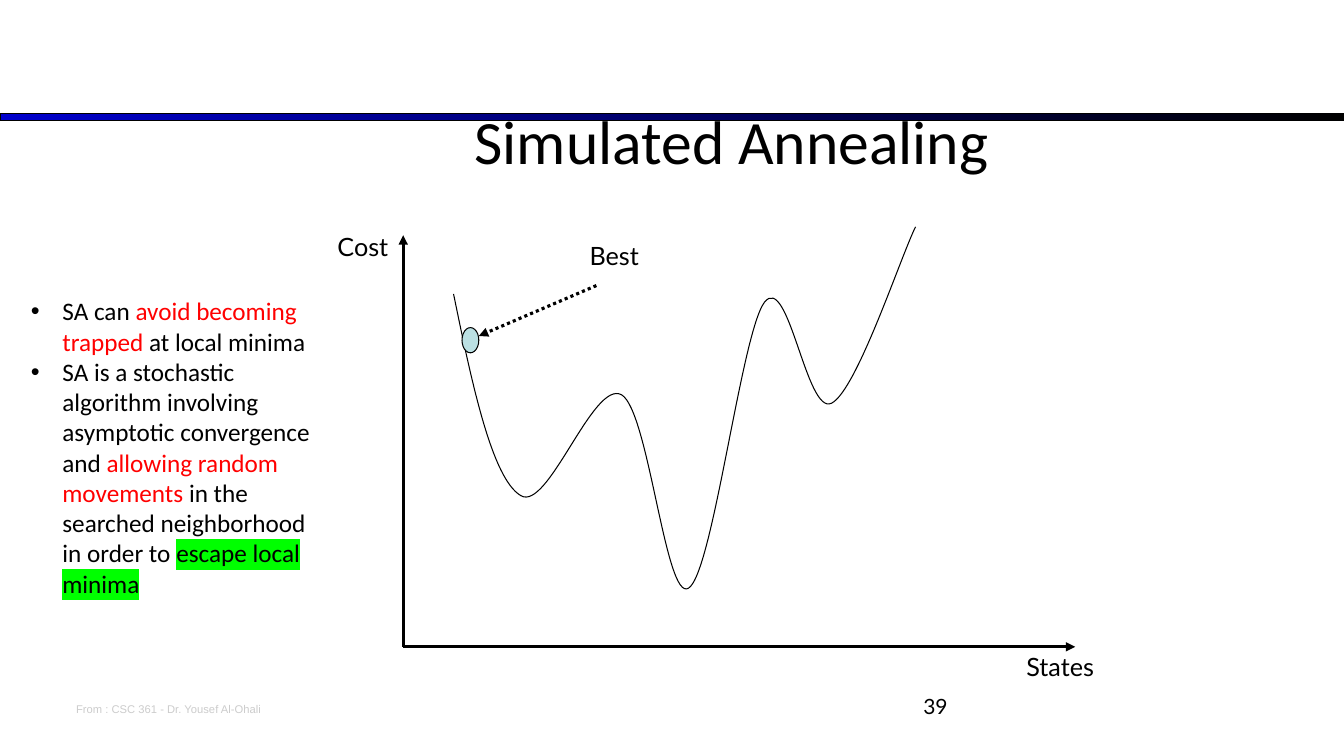
from lxml import etree
from pptx import Presentation, util as u
from pptx.dml.color import RGBColor
from pptx.enum import dml, shapes, text
from pptx.oxml.ns import qn

PX = 9525  # EMU in one px, 96 px to the inch
BLACK, RED, GREEN = "000000", "FF0000", "00FF00"


def px(*lengths):
    return [u.Emu(length * PX) for length in lengths]


def colour(value):
    return RGBColor.from_string(value)


def set_line(line, points=0.75):
    line.color.rgb = colour(BLACK)
    line.width = u.Pt(points)


def add_run(paragraph, words, size, font, value=BLACK, highlight=None):
    run = paragraph.add_run()
    run.text = words
    run.font.size = u.Pt(size)
    run.font.name = font
    run.font.color.rgb = colour(value)
    if highlight:
        mark = etree.Element(qn("a:highlight"))
        etree.SubElement(mark, qn("a:srgbClr"), val=highlight)
        run.font.fill  # the highlight follows the text fill
        run._r.rPr.find(qn("a:solidFill")).addnext(mark)


def add_text_frame(slide, box):
    frame = slide.shapes.add_textbox(*px(*box)).text_frame
    frame.word_wrap = True
    return frame


def add_label(slide, box, words, size=18, font="Lato", value=BLACK,
              align=text.PP_ALIGN.LEFT, anchor=text.MSO_ANCHOR.TOP):
    frame = add_text_frame(slide, box)
    frame.vertical_anchor = anchor
    paragraph = frame.paragraphs[0]
    paragraph.alignment = align
    add_run(paragraph, words, size, font, value)


def add_arrow(slide, start, end, dash=None):
    arrow = slide.shapes.add_connector(
        shapes.MSO_CONNECTOR.STRAIGHT, *px(*start, *end))
    set_line(arrow.line, 2.25)
    if dash:
        arrow.line.dash_style = dash
    etree.SubElement(arrow.line._ln, qn("a:tailEnd"), type="triangle")
    etree.SubElement(arrow._element.spPr, qn("a:effectLst"))


def add_curve(slide, start, controls):
    """Draw cubic curves, with three control points for each."""
    builder = slide.shapes.build_freeform(*start, scale=PX)
    builder.add_line_segments(controls, close=False)
    curve = builder.convert_to_shape()
    curve.shadow.inherit = False
    curve.fill.background()
    set_line(curve.line)
    segments = curve._element.xpath(".//a:lnTo")
    outline = segments[0].getparent()
    for first in range(0, len(segments), 3):
        cubic = etree.SubElement(outline, qn("a:cubicBezTo"))
        for segment in segments[first:first + 3]:
            cubic.append(segment[0])
            outline.remove(segment)


# Gradient rule across the slide
def add_rule(slide, box):
    rule = slide.shapes.add_shape(shapes.MSO_SHAPE.RECTANGLE, *px(*box))
    rule.shadow.inherit = False
    rule.fill.gradient()
    rule.fill.gradient_angle = 0
    for stop, value in zip(rule.fill.gradient_stops, ("0000CC", BLACK)):
        stop.color.rgb = colour(value)
    set_line(rule.line)


# Cost landscape with axes, curve and current best state
def add_landscape(slide, box):
    left, top, width, height = box

    def at(x, y):
        return left + x, top + y

    origin = at(0, height)
    add_arrow(slide, origin, at(0, 0))
    add_arrow(slide, origin, at(width, height))

    controls = [
        (66, 144), (85, 232), (112, 248),
        (138, 264), (181, 137), (208, 152),
        (234, 167), (250, 351), (272, 336),
        (295, 321), (322, 94), (344, 64),
        (367, 34), (384, 172), (408, 160),
        (432, 148), (474, 20), (488, -8),
    ]
    add_curve(slide, at(48, 56), [at(x, y) for x, y in controls])

    best = slide.shapes.add_shape(
        shapes.MSO_SHAPE.OVAL, *px(*at(56, 88), 16, 24))
    best.shadow.inherit = False
    best.fill.solid()
    best.fill.fore_color.rgb = colour("BBE0E3")
    set_line(best.line)
    add_arrow(slide, at(184, 48), at(72, 96), dml.MSO_LINE.ROUND_DOT)

    add_label(slide, (*at(-72, -8), 104, 38), "Cost")
    add_label(slide, (*at(584, height), 112, 38), "States")
    add_label(slide, (*at(168, 0), 80, 38), "Best")


# Bulleted remarks
def add_remarks(slide, box, remarks):
    frame = add_text_frame(slide, box)
    for index, runs in enumerate(remarks):
        paragraph = frame.add_paragraph() if index else frame.paragraphs[0]
        properties = paragraph._p.get_or_add_pPr()
        properties.set("marL", str(30 * PX))
        properties.set("indent", str(-30 * PX))
        etree.SubElement(properties, qn("a:buFont"), typeface="Arial")
        etree.SubElement(properties, qn("a:buChar"), char="•")
        for words, *style in runs:
            add_run(paragraph, words, 18, "Calibri", *style)


# Source credit and page number
def add_footer(slide, box):
    left, top, width, height = box
    add_label(slide, (left, top + 8, 640, 23),
              "From : CSC 361 - Dr. Yousef Al-Ohali", 8, "Arial", "CCCCCC")
    add_label(slide, (left + width - 224, top, 224, height), "39", 15,
              align=text.PP_ALIGN.RIGHT)


def main():
    presentation = Presentation()
    presentation.slide_width, presentation.slide_height = px(1280, 720)
    slide = presentation.slides.add_slide(presentation.slide_layouts[6])

    add_rule(slide, (0, 108, 1280, 7))
    add_label(slide, (288, 90, 818, 86), "Simulated Annealing", 44, "Calibri",
              align=text.PP_ALIGN.CENTER, anchor=text.MSO_ANCHOR.MIDDLE)
    add_landscape(slide, (384, 224, 640, 392))
    add_remarks(slide, (20, 277, 297, 300), [
        [("SA can ",), ("avoid becoming trapped ", RED), ("at local minima",)],
        [("SA is a stochastic algorithm involving asymptotic convergence and ",),
         ("allowing random movements", RED),
         (" in the searched neighborhood in order to ",),
         ("escape local minima", BLACK, GREEN)],
    ])
    add_footer(slide, (63, 656, 849, 50))
    presentation.save("out.pptx")


if __name__ == "__main__":
    main()
